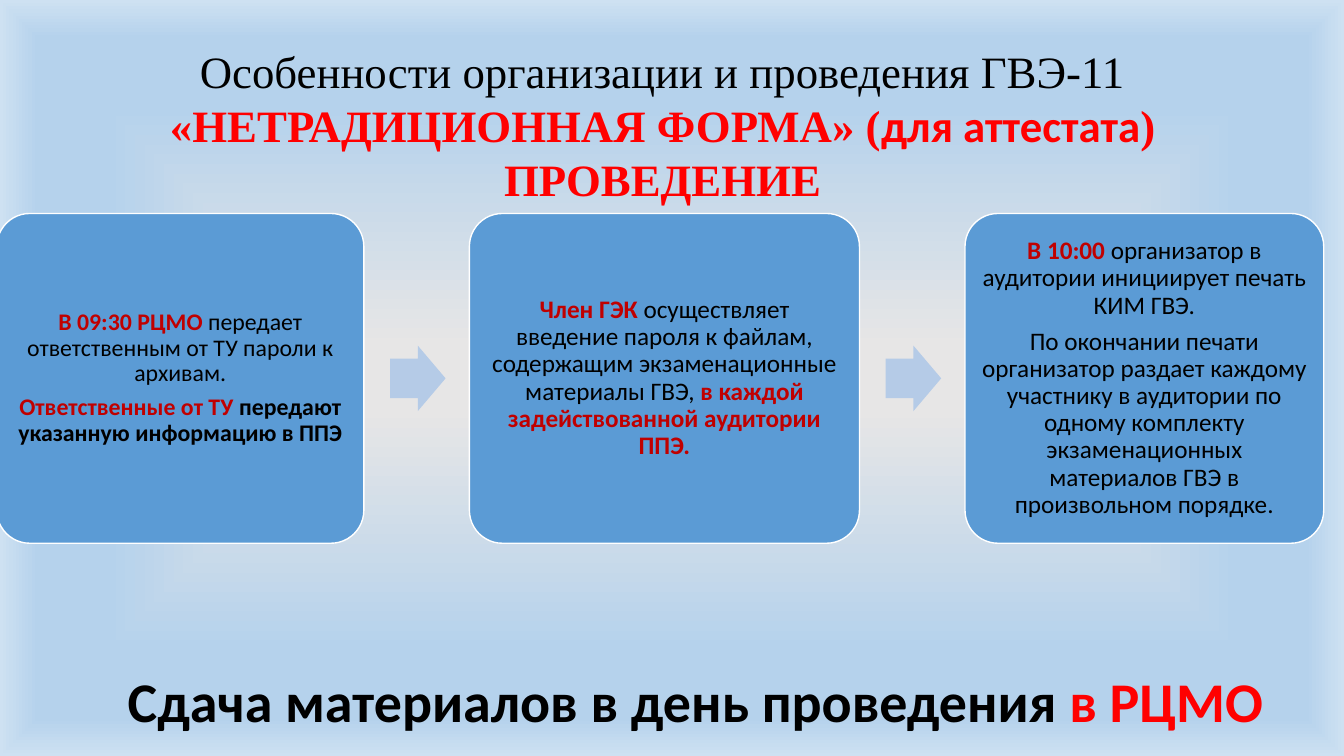
from lxml import etree
from pptx import Presentation
from pptx import util as u
from pptx.dml.color import RGBColor
from pptx.enum import shapes, text
from pptx.oxml.ns import qn

COLORS = {
    "black": "000000", "red": "FF0000", "dark_red": "C00000", "white": "FFFFFF",
    "card": "5B9BD5", "arrow": "B5CBE7",
    "grey": "E7E6E6", "sky": "B5D2EC", "edge": "CEE1F2",
}
BACKGROUND = [(8, "grey"), (72, "sky"), (90, "sky"), (100, "edge")]
SERIF, SANS = "Times New Roman", "Calibri"


def add_run(p, words, size=18, color="black", bold=False, font=SANS):
    r = p.add_run()
    r.text = words
    r.font.size, r.font.bold, r.font.name = u.Pt(size), bold, font
    r.font.color.rgb = RGBColor.from_string(COLORS[color])


def write(tf, paragraphs, align=text.PP_ALIGN.CENTER, spacing=1.0, after=0, **style):
    """Each paragraph is a list of (words, format overrides) pairs."""
    tf.word_wrap = True
    for i, runs in enumerate(paragraphs):
        p = tf.add_paragraph() if i else tf.paragraphs[0]
        p.alignment, p.line_spacing = align, spacing
        p.space_before, p.space_after = u.Pt(0), u.Pt(after)
        for words, changes in runs:
            add_run(p, words, **{**style, **changes})


class SlideBuilder:
    def __init__(self, prs):
        self.s = prs.slides.add_slide(prs.slide_layouts[5])

    def background(self, stops):
        """Gradient spreading from the centre of the slide to its edges."""
        self.s.background.fill.gradient()
        grad = self.s.element.find(".//" + qn("a:gradFill"))
        for child in list(grad):
            grad.remove(child)
        gs_list = etree.SubElement(grad, qn("a:gsLst"))
        for percent, color in stops:
            gs = etree.SubElement(gs_list, qn("a:gs"), pos=str(percent * 1000))
            etree.SubElement(gs, qn("a:srgbClr"), val=COLORS[color])
        shade = etree.SubElement(grad, qn("a:path"), path="shape")
        etree.SubElement(shade, qn("a:fillToRect"),
                         {side: "50000" for side in "ltrb"})

    def title(self, box, paragraphs, **style):
        sp = self.s.shapes.title
        sp.left, sp.top, sp.width, sp.height = map(u.Cm, box)
        tf = sp.text_frame
        tf.auto_size = text.MSO_AUTO_SIZE.NONE
        tf.vertical_anchor = text.MSO_ANCHOR.BOTTOM
        write(tf, paragraphs, **style)

    def shape(self, kind, box, fill, adjustments, line=None):
        sp = self.s.shapes.add_shape(kind, *map(u.Cm, box))
        sp.shadow.inherit = False
        for i, value in enumerate(adjustments):
            sp.adjustments[i] = value
        sp.fill.solid()
        sp.fill.fore_color.rgb = RGBColor.from_string(COLORS[fill])
        if line:
            sp.line.color.rgb = RGBColor.from_string(COLORS[line])
            sp.line.width = u.Pt(1)
        else:
            sp.line.fill.background()
        return sp

    def card(self, box, paragraphs, size):
        sp = self.shape(shapes.MSO_SHAPE.ROUNDED_RECTANGLE, box, "card", [0.1], "white")
        tf = sp.text_frame
        tf.margin_left = tf.margin_right = u.Cm(0.18)
        tf.margin_top = tf.margin_bottom = u.Cm(0.4)
        tf.vertical_anchor = text.MSO_ANCHOR.MIDDLE
        write(tf, paragraphs, spacing=0.9, after=size * 0.35, size=size)

    def arrow(self, box):
        self.shape(shapes.MSO_SHAPE.RIGHT_ARROW, box, "arrow", [0.6, 0.5])

    def text_box(self, box, paragraphs, **style):
        sp = self.s.shapes.add_textbox(*map(u.Cm, box))
        write(sp.text_frame, paragraphs, **style)


ACCENT = dict(color="dark_red", bold=True)
STEPS = [
    (9.25, 17, [
        [("В 09:30 РЦМО ", ACCENT),
         ("передает ответственным от ТУ пароли к архивам.", {})],
        [("Ответственные от ТУ ", ACCENT),
         ("передают указанную информацию в ППЭ", dict(bold=True))],
    ]),
    (9.83, 18, [
        [("Член ГЭК ", ACCENT),
         ("осуществляет введение пароля к файлам, содержащим "
          "экзаменационные материалы ГВЭ, ", {}),
         ("в каждой задействованной аудитории ППЭ.", ACCENT)],
    ]),
    (9.04, 18, [
        [("В 10:00 ", ACCENT),
         ("организатор в аудитории инициирует печать КИМ ГВЭ.", {})],
        [("По окончании печати организатор раздает каждому участнику в "
          "аудитории по одному комплекту экзаменационных материалов ГВЭ в "
          "произвольном порядке.", {})],
    ]),
]
CARD_TOP, CARD_H = 5.38, 8.31
ARROW_W, ARROW_H = 1.4, 1.65
GAP_BEFORE, GAP_AFTER = 0.66, 0.6


def main():
    prs = Presentation()
    prs.slide_width, prs.slide_height = u.Cm(33.87), u.Cm(19.05)
    slide = SlideBuilder(prs)
    slide.background(BACKGROUND)

    red = dict(color="red", bold=True)
    slide.title((0, 0, 33.4, 5.3), [
        [("Особенности организации и проведения ГВЭ-11", {})],
        [("«НЕТРАДИЦИОННАЯ ФОРМА» (", red),
         ("для аттестата", dict(red, font=SANS)),
         (")", red)],
        [("ПРОВЕДЕНИЕ", red)],
    ], size=32, font=SERIF)

    left = -0.08
    for i, (width, size, paragraphs) in enumerate(STEPS):
        if i:
            arrow_top = CARD_TOP + (CARD_H - ARROW_H) / 2
            slide.arrow((left + GAP_BEFORE, arrow_top, ARROW_W, ARROW_H))
            left += GAP_BEFORE + ARROW_W + GAP_AFTER
        slide.card((left, CARD_TOP, width, CARD_H), paragraphs, size)
        left += width

    slide.text_box((2.97, 16.66, 30.43, 1.96), [
        [("Сдача материалов в день проведения ", {}),
         ("в РЦМО", dict(color="red"))],
    ], align=text.PP_ALIGN.LEFT, size=40, bold=True)

    prs.save("out.pptx")


if __name__ == "__main__":
    main()
